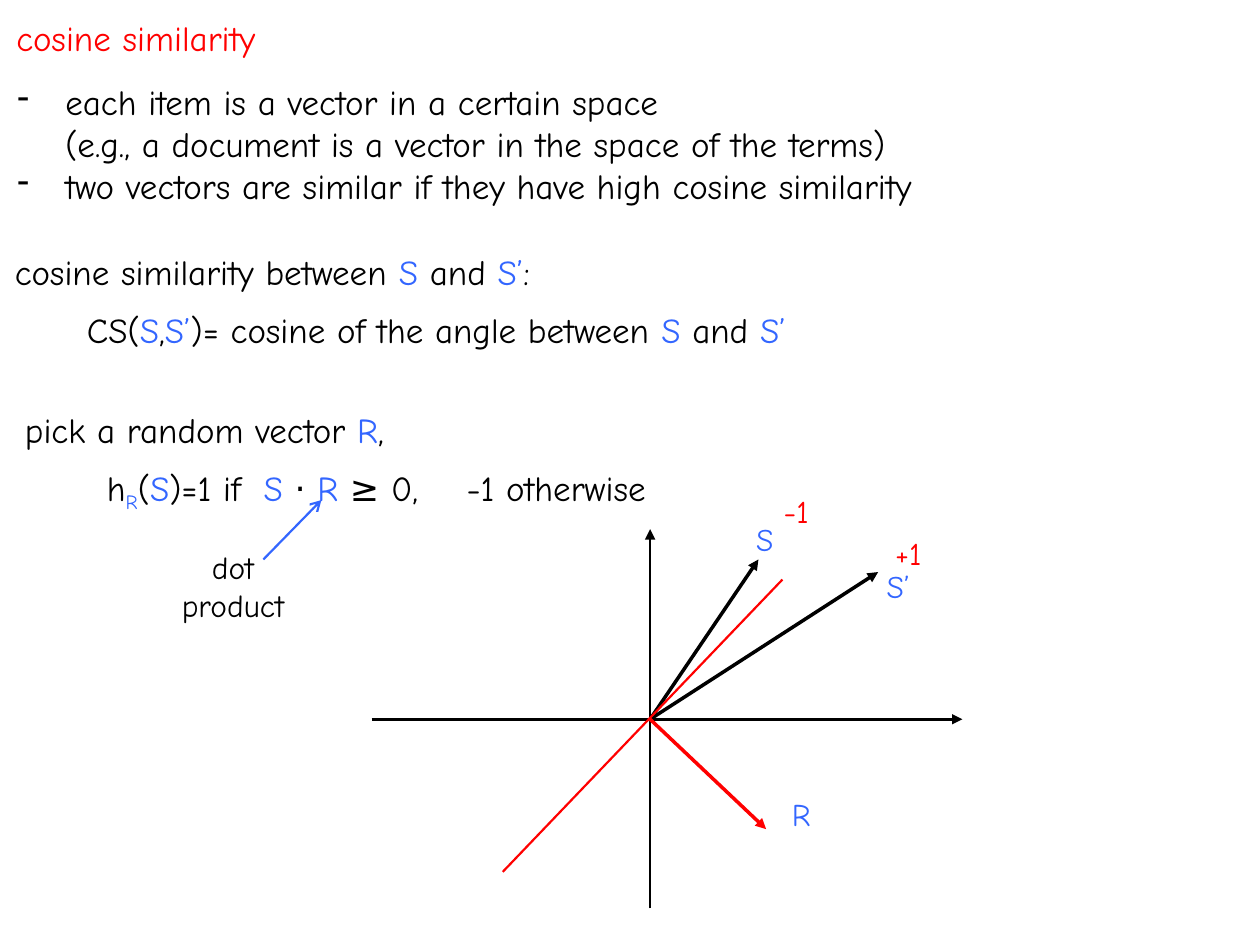
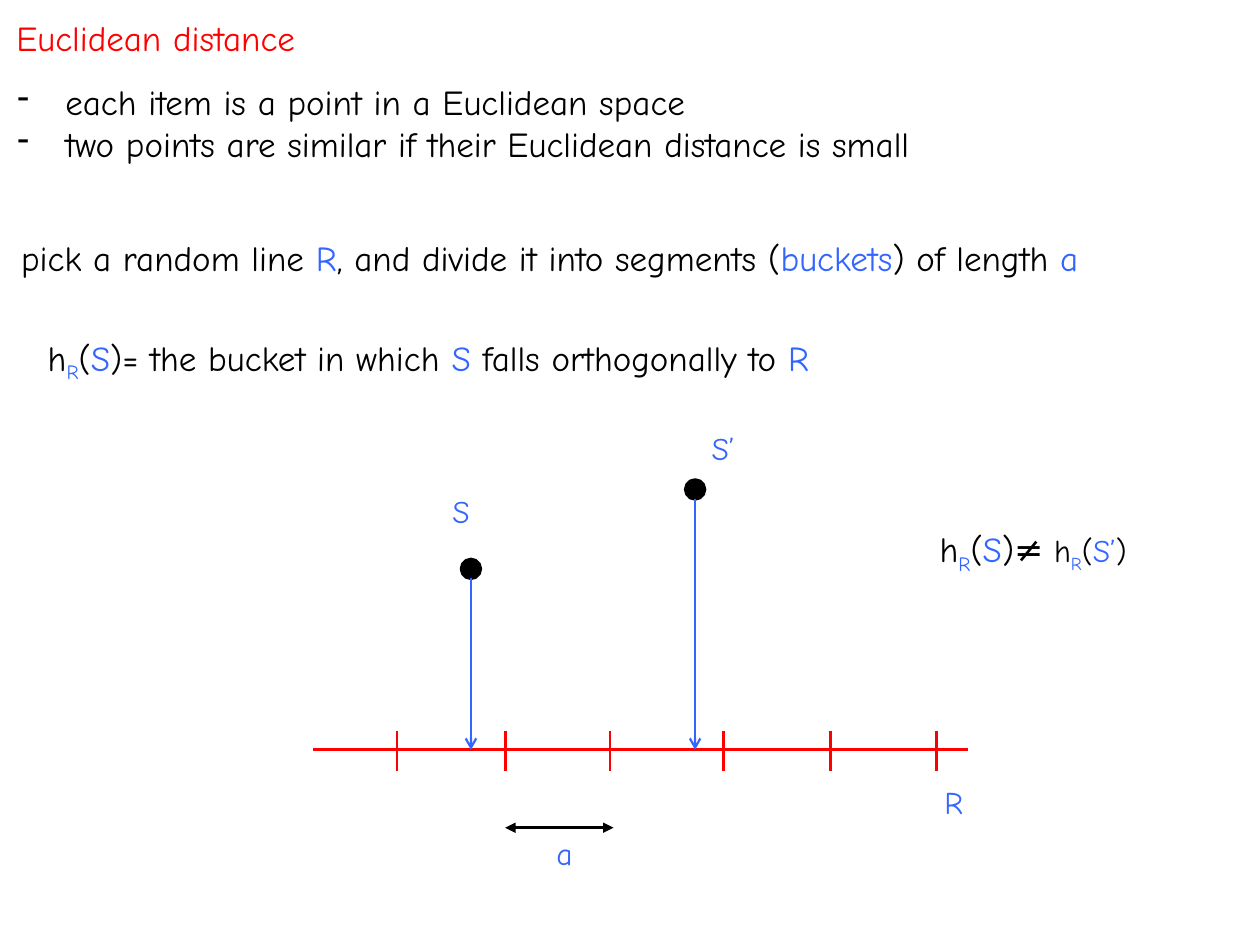
from dataclasses import dataclass, replace

from lxml import etree
from pptx import Presentation
from pptx.dml.color import RGBColor
from pptx.enum.shapes import MSO_CONNECTOR, MSO_SHAPE
from pptx.enum.text import MSO_AUTO_SIZE, PP_ALIGN
from pptx.oxml.ns import qn
from pptx.util import Pt

STRAIGHT = MSO_CONNECTOR.STRAIGHT
OVAL = MSO_SHAPE.OVAL
GROW = MSO_AUTO_SIZE.SHAPE_TO_FIT_TEXT
LEFT, CENTER = PP_ALIGN.LEFT, PP_ALIGN.CENTER

COLORS = {"ink": "000000", "blue": "3366FF", "red": "FF0000"}
FONT = "Comic Neue"
BODY_SIZE, LABEL_SIZE = 20, 18
LINE_HEIGHT = 31.7
BULLET_INDENT = 27.4
DOT_SIZE = 10.8


@dataclass(frozen=True)
class Run:
    text: str
    color: str = "ink"
    size: float = BODY_SIZE
    subscript: bool = False


@dataclass(frozen=True)
class TextLine:
    left: float
    top: float
    width: float
    runs: tuple[Run, ...]
    height: float = LINE_HEIGHT
    align: PP_ALIGN = LEFT
    tabs: tuple[float, ...] = ()


@dataclass(frozen=True)
class Label:
    text: str
    left: float
    top: float
    color: str = "blue"


@dataclass(frozen=True)
class Line:
    start: tuple[float, float]
    end: tuple[float, float]
    color: str
    width: float
    head: str = ""
    tail: str = ""


def ink(text: str) -> Run:
    return Run(text)


def blue(text: str) -> Run:
    return Run(text, "blue")


def hash_of(item: str, size: float = BODY_SIZE) -> tuple[Run, ...]:
    """Runs for h with subscript R, applied to an item, without the closing bracket."""
    runs = (ink("h"), Run("R", "blue", subscript=True), ink("("), blue(item))
    return tuple(replace(run, size=size) for run in runs)


def color_of(name: str) -> RGBColor:
    return RGBColor.from_string(COLORS[name])


# Text
def add_run(paragraph, item: Run) -> None:
    run = paragraph.add_run()
    run.text = item.text
    run.font.name = FONT
    run.font.size = Pt(item.size)
    run.font.color.rgb = color_of(item.color)
    if item.subscript:
        run.font._element.set("baseline", "-25000")


def add_text_frame(slide, left: float, top: float, width: float, height: float):
    box = slide.shapes.add_textbox(Pt(left), Pt(top), Pt(width), Pt(height))
    box.text_frame.word_wrap = True
    box.text_frame.auto_size = GROW
    return box.text_frame


def add_text(slide, line: TextLine) -> None:
    frame = add_text_frame(slide, line.left, line.top, line.width, line.height)
    paragraph = frame.paragraphs[0]
    paragraph.alignment = line.align
    if line.tabs:
        properties = paragraph._p.get_or_add_pPr()
        tab_list = etree.SubElement(properties, qn("a:tabLst"))
        for position in line.tabs:
            etree.SubElement(tab_list, qn("a:tab"), pos=str(Pt(position)), algn="l")
    for run in line.runs:
        add_run(paragraph, run)


def add_label(slide, label: Label) -> None:
    run = Run(label.text, label.color, LABEL_SIZE)
    add_text(slide, TextLine(label.left, label.top, 38.9, (run,), 28.8, CENTER))


def add_bullets(slide, bullets: list[tuple[str, ...]], height: float) -> None:
    """Each bullet is a tuple of its lines."""
    frame = add_text_frame(slide, 2.9, 42.5, 717, height)
    for index, lines in enumerate(bullets):
        paragraph = frame.add_paragraph() if index else frame.paragraphs[0]
        properties = paragraph._p.get_or_add_pPr()
        properties.set("marL", str(Pt(BULLET_INDENT)))
        properties.set("indent", str(-Pt(BULLET_INDENT)))
        etree.SubElement(properties, qn("a:buChar"), char="-")
        for line_index, text in enumerate(lines):
            if line_index:
                paragraph.add_line_break()
            add_run(paragraph, ink(text))


# Drawing
def add_line(slide, line: Line) -> None:
    points = (Pt(value) for value in (*line.start, *line.end))
    connector = slide.shapes.add_connector(STRAIGHT, *points)
    connector.line.color.rgb = color_of(line.color)
    connector.line.width = Pt(line.width)
    outline = connector.line._get_or_add_ln()
    for tag, kind in (("a:headEnd", line.head), ("a:tailEnd", line.tail)):
        if kind:
            etree.SubElement(outline, qn(tag), type=kind)
    etree.SubElement(connector._element.spPr, qn("a:effectLst"))


def add_dot(slide, center: float, top: float) -> None:
    dot = slide.shapes.add_shape(
        OVAL, Pt(center - DOT_SIZE / 2), Pt(top), Pt(DOT_SIZE), Pt(DOT_SIZE))
    dot.shadow.inherit = False
    dot.fill.solid()
    dot.fill.fore_color.rgb = color_of("ink")
    dot.line.color.rgb = color_of("ink")
    dot.line.width = Pt(2)


def add_titled_slide(presentation, title: str):
    slide = presentation.slides.add_slide(presentation.slide_layouts[6])
    add_text(slide, TextLine(2.2, 5.8, 697.7, (Run(title, "red"),)))
    return slide


def build_cosine_slide(presentation) -> None:
    slide = add_titled_slide(presentation, "cosine similarity")
    add_bullets(slide, [
        ("each item is a vector in a certain space",
         "(e.g., a document is a vector in the space of the terms)"),
        ("two vectors are similar if they have high cosine similarity",),
    ], 80)

    # Definitions
    s_and_s_prime = (blue("S "), ink("and"), blue(" S’"))
    for line in (
        TextLine(1.4, 139.7, 364.3,
                 (ink("cosine similarity between "), *s_and_s_prime, ink(":"))),
        TextLine(42.5, 172.8, 677.5,
                 (ink("CS("), blue("S"), ink(","), blue("S’"),
                  ink(")= cosine of the angle between "), *s_and_s_prime)),
        TextLine(7.2, 229.7, 364.3,
                 (ink("pick a random vector "), blue("R"), ink(","))),
        TextLine(54, 262.8, 411.1,
                 (*hash_of("S"), ink(")=1 if\t"), blue("S "), ink("⋅ "),
                  blue("R "), ink("≥ 0,\t-1 otherwise")), tabs=(89.5, 205.5)),
        TextLine(87.8, 309.6, 90.7, (Run("dot product", size=LABEL_SIZE),),
                 51.1, CENTER),
    ):
        add_text(slide, line)

    # Axes, vectors and the line orthogonal to R
    origin_x, origin_y = origin = (371.5, 411)
    for line in (
        Line((150.5, 319.7), (183.6, 285.8), "blue", 1.25, tail="arrow"),
        Line((origin_x, 519.1), (origin_x, 302.4), "ink", 1.5, tail="triangle"),
        Line((212.4, origin_y), (550, origin_y), "ink", 1.5, tail="triangle"),
        Line(origin, (433.4, 319.7), "ink", 2, tail="triangle"),
        Line(origin, (501.8, 326.9), "ink", 2, tail="triangle"),
        Line(origin, (437.8, 473.8), "red", 2, tail="triangle"),
        Line((287.3, 498.2), (447.1, 331.2), "red", 1.25),
    ):
        add_line(slide, line)
    for label in (
        Label("S", 417.6, 293.8), Label("S’", 493.9, 320.4),
        Label("R", 438.5, 450.7),
        Label("-1", 435.6, 277.9, "red"), Label("+1", 499.7, 301.7, "red"),
    ):
        add_label(slide, label)


def build_euclidean_slide(presentation) -> None:
    slide = add_titled_slide(presentation, "Euclidean distance")
    add_bullets(slide, [
        ("each item is a point in a Euclidean space",),
        ("two points are similar if their Euclidean distance is small",),
    ], 55.4)

    # Definitions
    for line in (
        TextLine(5, 131.8, 695.5,
                 (ink("pick a random line "), blue("R"),
                  ink(", and divide it into segments ("), blue("buckets"),
                  ink(") of length "), blue("a"))),
        TextLine(20.2, 188.6, 544.3,
                 (*hash_of("S"), ink(")= the bucket in which "), blue("S "),
                  ink("falls orthogonally to "), blue("R"))),
        TextLine(526.3, 298.1, 128.2,
                 (*hash_of("S"), ink(")≠"), Run(" ", size=LABEL_SIZE),
                  *hash_of("S’", LABEL_SIZE), Run(")", size=LABEL_SIZE)),
                 align=CENTER),
    ):
        add_text(slide, line)

    # Random line with its bucket borders
    line_y = 428.4
    borders = (226.8, 288.7, 348.5, 413.3, 474.5, 535)
    add_line(slide, Line((178.6, line_y), (553, line_y), "red", 1.5))
    for x in borders:
        add_line(slide, Line((x, 417.6), (x, 440.6), "red", 1.5))
    add_line(slide, Line((350.6, 473), (borders[1], 473), "ink", 1.5,
                         "triangle", "triangle"))

    # Points falling onto the line
    for x, top in ((269.1, 319.7), (397.2, 274.3)):
        add_dot(slide, x, top)
        add_line(slide, Line((x, top + DOT_SIZE), (x, line_y), "blue", 1.25,
                             tail="arrow"))
    for label in (
        Label("S", 244.1, 277.9), Label("S’", 393.8, 241.9),
        Label("R", 525.6, 444.2), Label("a", 303.1, 473),
    ):
        add_label(slide, label)


def main() -> None:
    presentation = Presentation()
    presentation.slide_width, presentation.slide_height = Pt(720), Pt(540)
    build_cosine_slide(presentation)
    build_euclidean_slide(presentation)
    presentation.save("out.pptx")


if __name__ == "__main__":
    main()
